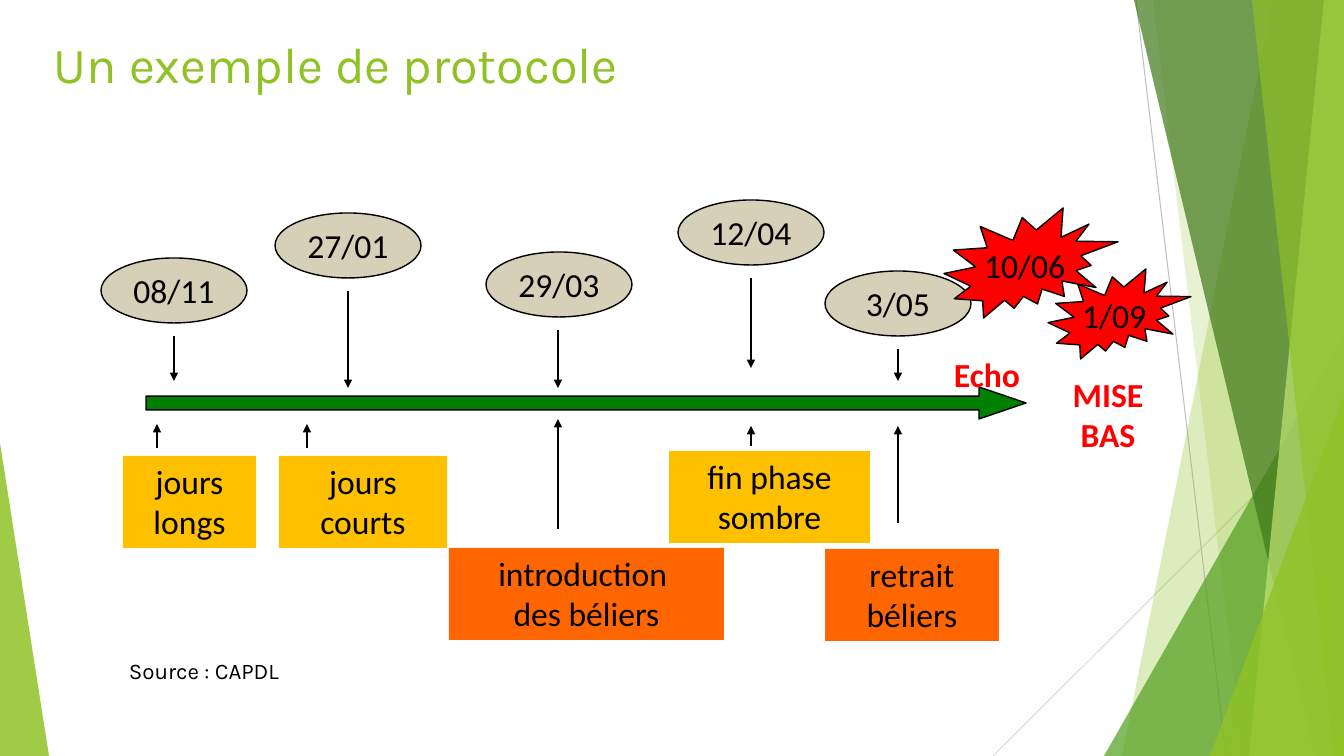
from lxml import etree
from pptx import Presentation
from pptx.dml.color import RGBColor
from pptx.enum.shapes import MSO_CONNECTOR, MSO_SHAPE as Preset
from pptx.enum.text import MSO_ANCHOR as Anchor, MSO_AUTO_SIZE as AutoSize, PP_ALIGN as Align
from pptx.oxml.ns import qn
from pptx.util import Emu, Pt

WIDTH, HEIGHT = 1344, 756
LIME, BLACK, RED = "90C226", "000000", "FF0000"
AMBER, ORANGE, SAND, GREEN = "FFC000", "FF6600", "D6D0B8", "008000"


def px(value):
    return Emu(round(value * 914400 / 100.8))


def color(value):
    return RGBColor.from_string(value)


class Canvas:
    body_font, heading_font = "Calibri", "Karla"
    body_size = 24

    def __init__(self, presentation):
        self.slide = presentation.slides.add_slide(presentation.slide_layouts[6])
        self.shapes = self.slide.shapes

    def paint(self, shape, fill, outline=None, alpha=100):
        shape.shadow.inherit = False
        shape.fill.solid()
        shape.fill.fore_color.rgb = color(fill)
        if alpha < 100:
            fill_color = shape._element.spPr.find(qn("a:solidFill"))[0]
            etree.SubElement(fill_color, qn("a:alpha"), val=str(alpha * 1000))
        if outline:
            shape.line.color.rgb = color(outline)
            shape.line.width = Pt(1)
        else:
            shape.line.fill.background()

    def label(self, shape, text, ink=BLACK, size=body_size, font=body_font, bold=False,
              align=Align.CENTER, anchor=Anchor.TOP, wrap=True):
        frame = shape.text_frame
        frame.text = text
        frame.word_wrap = wrap
        frame.vertical_anchor = anchor
        frame.auto_size = AutoSize.NONE
        for paragraph in frame.paragraphs:
            paragraph.alignment = align
            for run in paragraph.runs:
                run.font.name = font
                run.font.size = Pt(size)
                run.font.bold = bold
                run.font.color.rgb = color(ink)

    def preset(self, kind, box, fill, outline=None, alpha=100, adjustments=()):
        shape = self.shapes.add_shape(kind, *map(px, box))
        for index, value in enumerate(adjustments):
            shape.adjustments[index] = value
        self.paint(shape, fill, outline, alpha)
        return shape

    def band(self, top_x, bottom_x, fill, alpha):
        """Strip from a slanted left edge to the right side of the slide."""
        builder = self.shapes.build_freeform(px(top_x), 0)
        corners = [(WIDTH, 0), (WIDTH, HEIGHT), (bottom_x, HEIGHT)]
        builder.add_line_segments([(px(x), px(y)) for x, y in corners], close=True)
        self.paint(builder.convert_to_shape(), fill, alpha=alpha)

    def line(self, start, end, stroke=BLACK, width=1, arrow=False):
        points = map(px, (*start, *end))
        connector = self.shapes.add_connector(MSO_CONNECTOR.STRAIGHT, *points)
        connector.line.color.rgb = color(stroke)
        connector.line.width = Pt(width)
        properties = connector._element.spPr
        if arrow:
            etree.SubElement(properties.find(qn("a:ln")), qn("a:tailEnd"), type="triangle")
        etree.SubElement(properties, qn("a:effectLst"))

    def text(self, box, text, **style):
        self.label(self.shapes.add_textbox(*map(px, box)), text, **style)

    def date(self, kind, box, fill, text):
        shape = self.preset(kind, box, fill, BLACK)
        self.label(shape, text, anchor=Anchor.MIDDLE, wrap=False)


def draw_background(canvas):
    canvas.line((1136, 0), (1226, HEIGHT), "BFBFBF", 0.75)
    canvas.line((WIDTH, 406), (993, HEIGHT), "D9D9D9", 0.75)
    canvas.band(1273, 1122, LIME, 30)
    canvas.band(1153, 1243, LIME, 20)
    canvas.preset(Preset.ISOSCELES_TRIANGLE, (1104, 336, 240, 420), "54A021",
                  alpha=72, adjustments=[1])
    canvas.band(1134, 1315, "3F7819", 70)
    canvas.band(1324, 1249, "C0E474", 70)
    canvas.band(1252, 1334, LIME, 65)
    canvas.preset(Preset.ISOSCELES_TRIANGLE, (1210, 396, 134, 360), LIME,
                  alpha=80, adjustments=[1])
    canvas.preset(Preset.ISOSCELES_TRIANGLE, (0, 443, 49, 313), LIME,
                  alpha=85, adjustments=[0])


def draw_timeline(canvas):
    # Steps below the time axis
    for left, top, width, fill, step in [
        (123, 456, 133, AMBER, "jours longs"),
        (279, 456, 168, AMBER, "jours courts"),
        (449, 548, 275, ORANGE, "introduction \vdes béliers"),
        (669, 451, 201, AMBER, "fin phase sombre"),
        (825, 549, 174, ORANGE, "retrait béliers"),
    ]:
        box = canvas.preset(Preset.RECTANGLE, (left, top, width, 92), fill)
        canvas.label(box, step)

    # Time axis
    canvas.preset(Preset.RIGHT_ARROW, (146, 387, 880, 32), GREEN, BLACK,
                  adjustments=[0.43, 1.47])

    # Dates above the axis
    for left, top, day in [(101, 258, "08/11"), (275, 213, "27/01"), (486, 252, "29/03"),
                           (678, 200, "12/04"), (825, 271, "3/05")]:
        canvas.date(Preset.OVAL, (left, top, 146, 65), SAND, day)

    # Scan and lambing
    canvas.text((1044, 369, 128, 92), "MISE BAS", ink=RED, bold=True)
    canvas.date(Preset.EXPLOSION2, (1048, 269, 143, 90), RED, "1/09")
    canvas.date(Preset.EXPLOSION2, (944, 208, 174, 110), RED, "10/06")
    canvas.text((944, 349, 130, 50), "Echo", ink=RED, bold=True, align=Align.LEFT)

    # Vertical arrows pointing at the axis
    for x, start, end in [
        (174, 336, 381), (348, 291, 388), (558, 330, 388), (558, 529, 419),
        (751, 278, 368), (751, 446, 426), (898, 349, 381), (898, 523, 426),
        (307, 448, 424), (157, 448, 424),
    ]:
        canvas.line((x, start), (x, end), arrow=True)


def main():
    presentation = Presentation()
    presentation.slide_width = px(WIDTH)
    presentation.slide_height = px(HEIGHT)
    canvas = Canvas(presentation)
    draw_background(canvas)
    draw_timeline(canvas)

    # Title and source
    heading = {"font": canvas.heading_font, "align": Align.LEFT}
    canvas.text((44, 28, 813, 126), "Un exemple de protocole", ink=LIME, size=36, **heading)
    canvas.text((119, 652, 175, 37), "Source : CAPDL", size=16, wrap=False, **heading)
    presentation.save("out.pptx")


if __name__ == "__main__":
    main()
